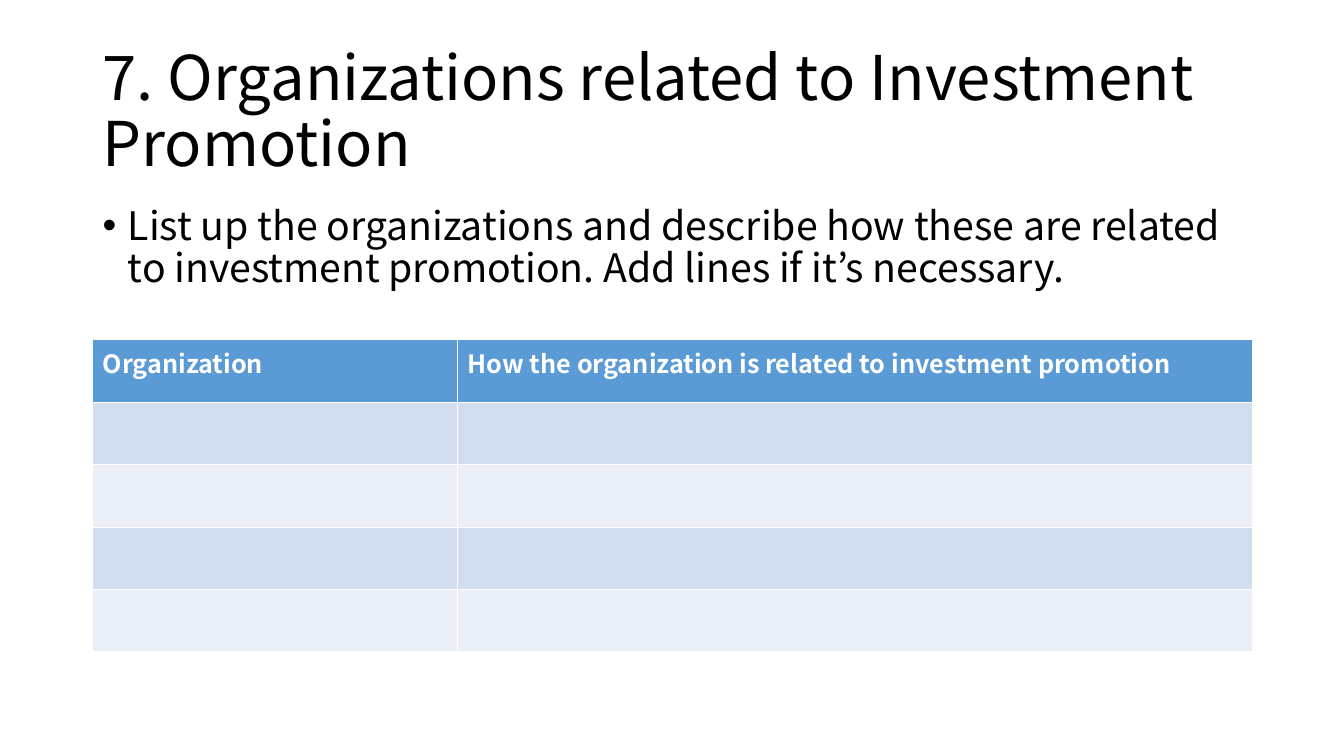
import pptx
import pptx.dml.color
import pptx.enum.text
import pptx.oxml.ns
import pptx.oxml.xmlchemy
import pptx.util
from pptx.util import Inches

FONT = "Noto Sans CJK JP"
COLORS = {
    "text": "000000",
    "header": "5B9BD5",
    "header_text": "FFFFFF",
    "odd_row": "D2DEEF",
    "even_row": "EAEFF7",
}
LEFT, WIDTH = 0.92, 11.5
COLUMN_WIDTHS = (3.62, 7.88)
ROW_COUNT, ROW_HEIGHT = 5, 0.62
HEADINGS = (
    "Organization",
    "How the organization is related to investment promotion",
)


def color(name):
    return pptx.dml.color.RGBColor.from_string(COLORS[name])


def style_font(para, size, color_name, bold=False):
    para.font.name = FONT
    para.font.size = pptx.util.Pt(size)
    para.font.bold = bold
    para.font.color.rgb = color(color_name)


def add_text(page, text, top, height, size, anchor):
    box = page.shapes.add_textbox(
        Inches(LEFT), Inches(top), Inches(WIDTH), Inches(height)
    )
    box.text_frame.word_wrap = True
    box.text_frame.vertical_anchor = anchor
    para = box.text_frame.paragraphs[0]
    para.text = text
    para.line_spacing = 0.9
    style_font(para, size, "text")
    return para


def add_bullet(para, indent):
    para.space_before = pptx.util.Pt(10)
    properties = para._p.get_or_add_pPr()
    properties.set("marL", str(Inches(indent)))
    properties.set("indent", str(-Inches(indent)))
    # Bullet elements must come before the default run properties.
    defaults = properties.find(pptx.oxml.ns.qn("a:defRPr"))
    for tag, name, value in (("a:buFont", "typeface", "Arial"), ("a:buChar", "char", "•")):
        bullet = pptx.oxml.xmlchemy.OxmlElement(tag)
        bullet.set(name, value)
        defaults.addprevious(bullet)


def add_organization_table(page):
    """Add a header row and empty banded rows; the default style draws white borders."""
    table = page.shapes.add_table(
        ROW_COUNT, len(COLUMN_WIDTHS), Inches(LEFT), Inches(3.37),
        Inches(WIDTH), Inches(ROW_COUNT * ROW_HEIGHT),
    ).table
    for column, width in zip(table.columns, COLUMN_WIDTHS):
        column.width = Inches(width)
    for index, row in enumerate(table.rows):
        row.height = Inches(ROW_HEIGHT)
        band = "odd_row" if index % 2 else "even_row"
        for cell in row.cells:
            cell.fill.solid()
            cell.fill.fore_color.rgb = color(band if index else "header")
    for cell, heading in zip(table.rows[0].cells, HEADINGS):
        para = cell.text_frame.paragraphs[0]
        para.text = heading
        style_font(para, 18, "header_text", bold=True)


def main():
    deck = pptx.Presentation()
    deck.slide_width, deck.slide_height = Inches(13.33), Inches(7.5)
    page = deck.slides.add_slide(deck.slide_layouts[6])
    anchors = pptx.enum.text.MSO_ANCHOR
    add_text(
        page, "7. Organizations related to Investment Promotion",
        0.4, 1.45, 44, anchors.MIDDLE,
    )
    instruction = add_text(
        page,
        "List up the organizations and describe how these are related "
        "to investment promotion. Add lines if it’s necessary.",
        2, 1.37, 28, anchors.TOP,
    )
    add_bullet(instruction, 0.25)
    add_organization_table(page)
    deck.save("out.pptx")


if __name__ == "__main__":
    main()
